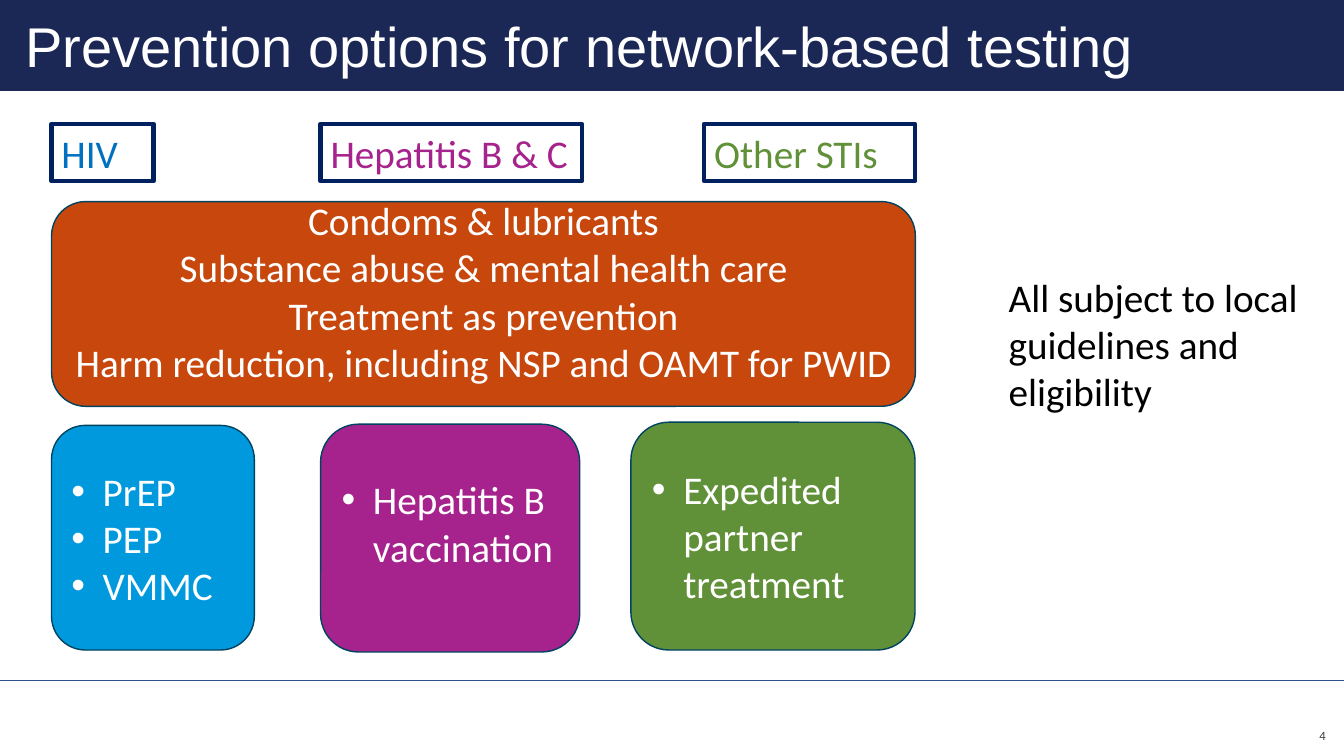
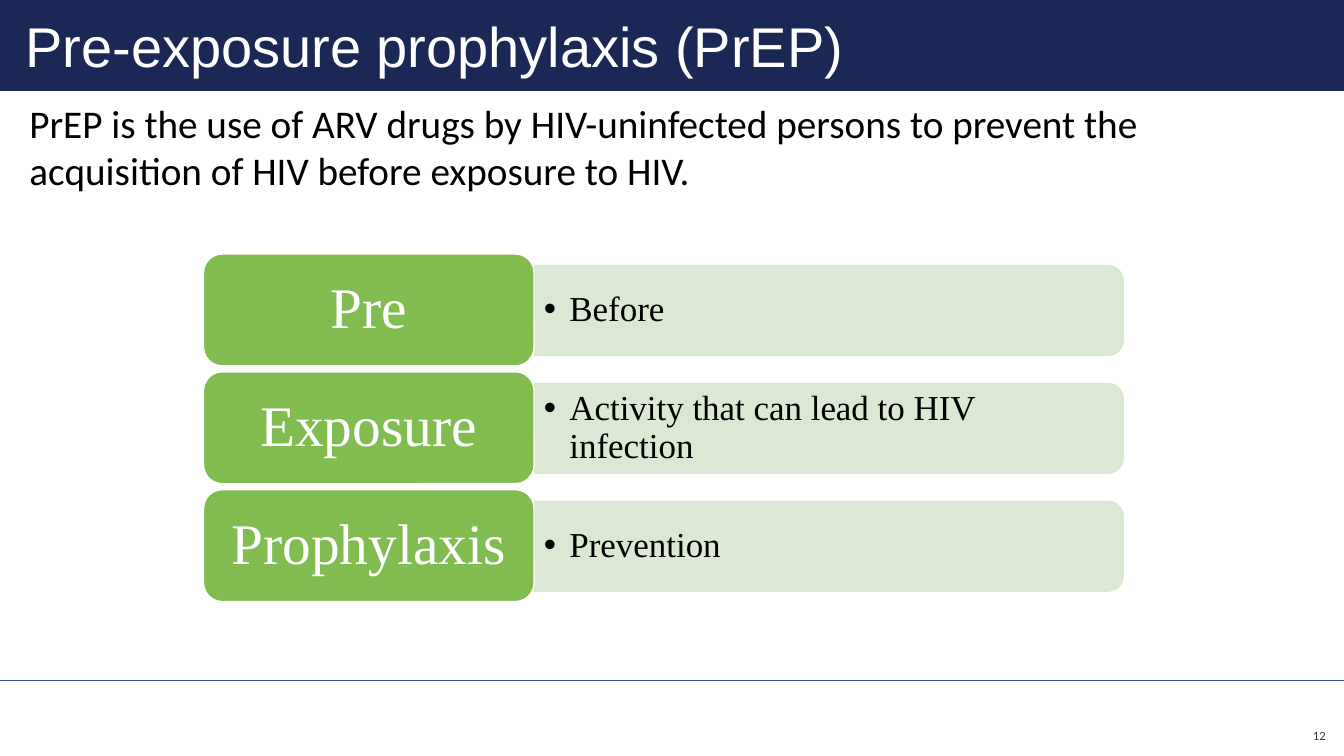
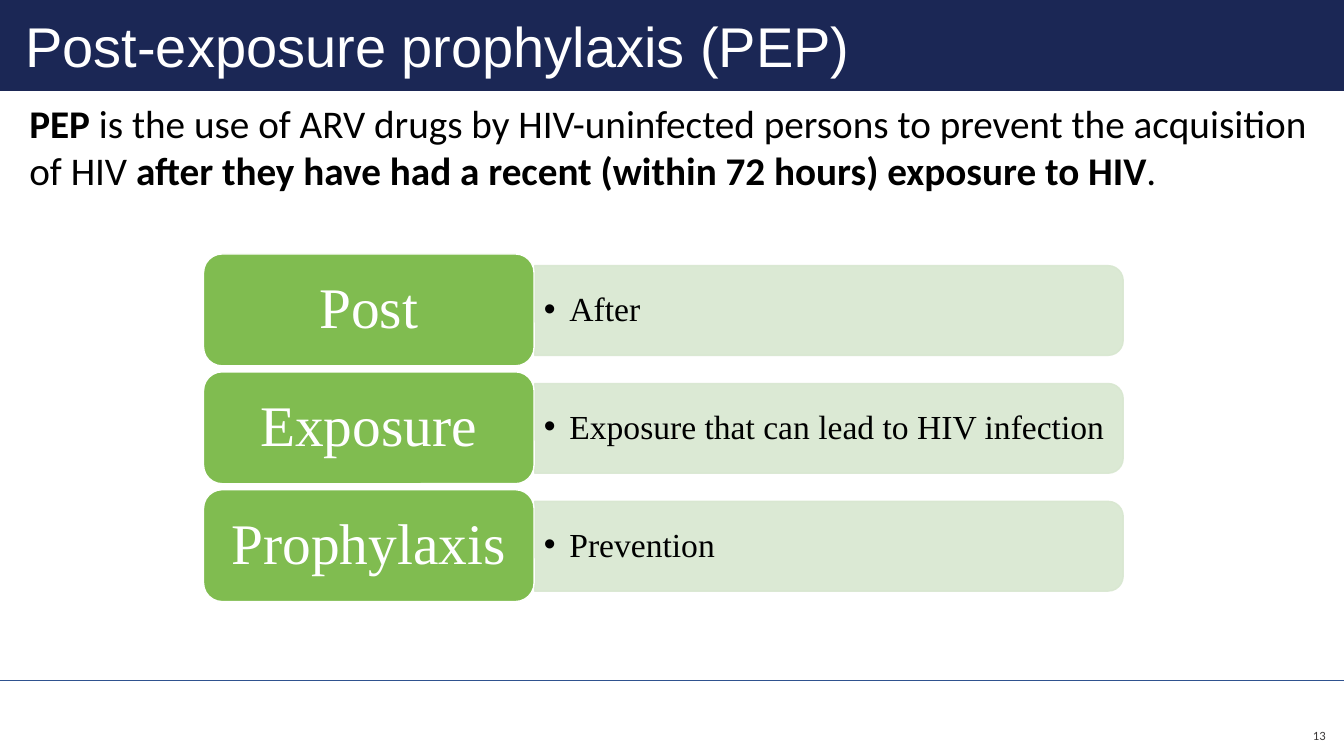
"""Build three slides on prevention options, PrEP and PEP."""
from dataclasses import dataclass

from lxml.etree import SubElement
from pptx import Presentation
from pptx.dml.color import RGBColor as Rgb
from pptx.enum.shapes import MSO_CONNECTOR as Link, MSO_SHAPE as Kind
from pptx.enum.text import MSO_ANCHOR as Anchor, PP_ALIGN as Align
from pptx.oxml.ns import qn
from pptx.util import Cm, Pt


@dataclass(frozen=True)
class Theme:
    navy: str = "1B2755"
    rule: str = "2F528F"
    frame: str = "002060"
    edge: str = "004361"
    white: str = "FFFFFF"
    black: str = "000000"
    grey: str = "3B3838"
    sky: str = "0099DD"
    blue: str = "0070C0"
    plum: str = "A6228C"
    moss: str = "609138"
    rust: str = "C7470D"
    leaf: str = "80BC50"
    mint: str = "D8E7D0"
    head: tuple = ("Arial", 40)
    body: tuple = ("Calibri", 28)
    foot: tuple = ("Calibri", 9)
    term: tuple = ("Times New Roman", 41)


T = Theme()


def draw(slide, kind, box, fill=None, line=None, width=1):
    """Add a shape with the given fill and outline."""
    shape = slide.shapes.add_shape(kind, *map(Cm, box))
    shape.shadow.inherit = False
    if fill:
        shape.fill.solid()
        shape.fill.fore_color.rgb = Rgb.from_string(fill)
    else:
        shape.fill.background()
    if line:
        shape.line.color.rgb = Rgb.from_string(line)
        shape.line.width = Pt(width)
    else:
        shape.line.fill.background()
    return shape


def write(shape, lines, style, color, align=Align.LEFT, anchor=Anchor.TOP,
          pad=(0.25, 0.13, 0.25, 0.13), dot=0, space=None):
    """Fill a shape with paragraphs; ** switches bold and dot is the bullet indent."""
    frame = shape.text_frame
    frame.word_wrap = True
    frame.vertical_anchor = anchor
    (frame.margin_left, frame.margin_top,
     frame.margin_right, frame.margin_bottom) = map(Cm, pad)
    for i, line in enumerate(lines):
        para = frame.add_paragraph() if i else frame.paragraphs[0]
        para.alignment = align
        if dot:
            props = para._p.get_or_add_pPr()
            props.set("marL", str(Cm(dot)))
            props.set("indent", str(-Cm(dot)))
            SubElement(props, qn("a:buFont"), typeface="Arial")
            SubElement(props, qn("a:buChar"), char="•")
        if space:
            para.line_spacing = space
        font = para.font
        font.name, font.size = style[0], Pt(style[1])
        font.color.rgb = Rgb.from_string(color)
        for j, part in enumerate(line.split("**")):
            if part:
                run = para.add_run()
                run.text = part
                if j % 2:
                    run.font.bold = True


deck = Presentation()
deck.slide_width, deck.slide_height = Cm(33.87), Cm(19.05)
flat = (0, 0, 0, 0)

slides = []
for title, page in [
    ("Prevention options for network-based testing", "4"),
    ("Pre-exposure prophylaxis (PrEP)", "12"),
    ("Post-exposure prophylaxis (PEP)", "13"),
]:
    slide = deck.slides.add_slide(deck.slide_layouts[6])
    slides.append(slide)
    draw(slide, Kind.RECTANGLE, (0, 0, 33.87, 2.29), T.navy)
    num = slide.shapes.add_textbox(Cm(32.03), Cm(18.03), Cm(1.63), Cm(1.02))
    write(num, [page], T.foot, T.grey, Align.RIGHT, Anchor.MIDDLE)
    rule = slide.shapes.add_connector(
        Link.STRAIGHT, Cm(0), Cm(17.15), Cm(33.87), Cm(17.15))
    rule.line.color.rgb = Rgb.from_string(T.rule)
    rule.line.width = Pt(0.5)
    SubElement(rule.element.spPr, qn("a:effectLst"))
    head = slide.shapes.add_textbox(Cm(0.64), Cm(0.28), Cm(32.49), Cm(1.7))
    write(head, [title], T.head, T.white, pad=flat)

first, *others = slides

for text, left, width, color in [
    ("HIV", 1.3, 2.57, T.blue),
    ("Hepatitis B & C", 8.08, 6.58, T.plum),
    ("Other STIs", 17.75, 5.31, T.moss),
]:
    label = draw(first, Kind.RECTANGLE, (left, 3.12, width, 1.45), None, T.frame, 3)
    write(label, [text], T.body, color)

for lines, box, fill, base in [
    (["PrEP", "PEP", "VMMC"], (1.3, 10.72, 5.11, 5.66), T.sky, 0.13),
    (["Hepatitis B vaccination"], (8.08, 10.69, 6.53, 5.74), T.plum, 0.9),
    (["Expedited partner treatment"], (15.9, 10.64, 7.16, 5.74), T.moss, 0.13),
]:
    panel = draw(first, Kind.ROUNDED_RECTANGLE, box, fill, T.edge)
    write(panel, lines, T.body, T.white, anchor=Anchor.MIDDLE,
          pad=(0.25, 0.13, 0.25, base), dot=0.79)

common = draw(first, Kind.ROUNDED_RECTANGLE, (1.3, 5.08, 21.77, 5.16), T.rust, T.edge)
write(common, [
    "Condoms & lubricants",
    "Substance abuse & mental health care",
    "Treatment as prevention",
    "Harm reduction, including NSP and OAMT for PWID",
], T.body, T.white, Align.CENTER, Anchor.MIDDLE, (0.25, 0, 0.25, 0.66))

note = first.shapes.add_textbox(Cm(25.17), Cm(6.76), Cm(7.98), Cm(7.01))
write(note, ["All subject to local guidelines and eligibility"], T.body, T.black)

intros = [
    "PrEP is the use of ARV drugs by HIV-uninfected persons to prevent the "
    "acquisition of HIV before exposure to HIV.",
    "**PEP** is the use of ARV drugs by HIV-uninfected persons to prevent the "
    "acquisition of HIV **after they have had a recent (within 72 hours) "
    "exposure to HIV**.",
]
tables = [
    [("Pre", "Before"),
     ("Exposure", "Activity that can lead to HIV infection"),
     ("Prophylaxis", "Prevention")],
    [("Post", "After"),
     ("Exposure", "Exposure that can lead to HIV infection"),
     ("Prophylaxis", "Prevention")],
]
for slide, intro, rows, size in zip(others, intros, tables, (25, 24)):
    lead = slide.shapes.add_textbox(Cm(0.74), Cm(2.51), Cm(32.26), Cm(3.81))
    write(lead, [intro], T.body, T.black, pad=flat)
    for i, (term, sense) in enumerate(rows):
        top = 6.4 + 2.97 * i
        bar = draw(slide, Kind.ROUND_2_SAME_RECTANGLE,
                   (19.76, top - 5.99, 2.26, 14.83), T.mint, T.mint)
        bar.rotation = 90
        for tone in bar.element.spPr.iter(qn("a:srgbClr")):
            SubElement(tone, qn("a:alpha"), val="90000")
        text = slide.shapes.add_textbox(Cm(13.46), Cm(top + 0.41), Cm(14.71), Cm(2.03))
        write(text, [sense], (T.term[0], size), T.black,
              anchor=Anchor.MIDDLE, dot=0.64, space=0.9)
        card = draw(slide, Kind.ROUNDED_RECTANGLE, (5.13, top, 8.33, 2.82),
                    T.leaf, T.white)
        write(card, [term], T.term, T.white, Align.CENTER, Anchor.MIDDLE,
              (0.43, 0.23, 0.43, 0.23), space=0.9)

deck.save("out.pptx")
